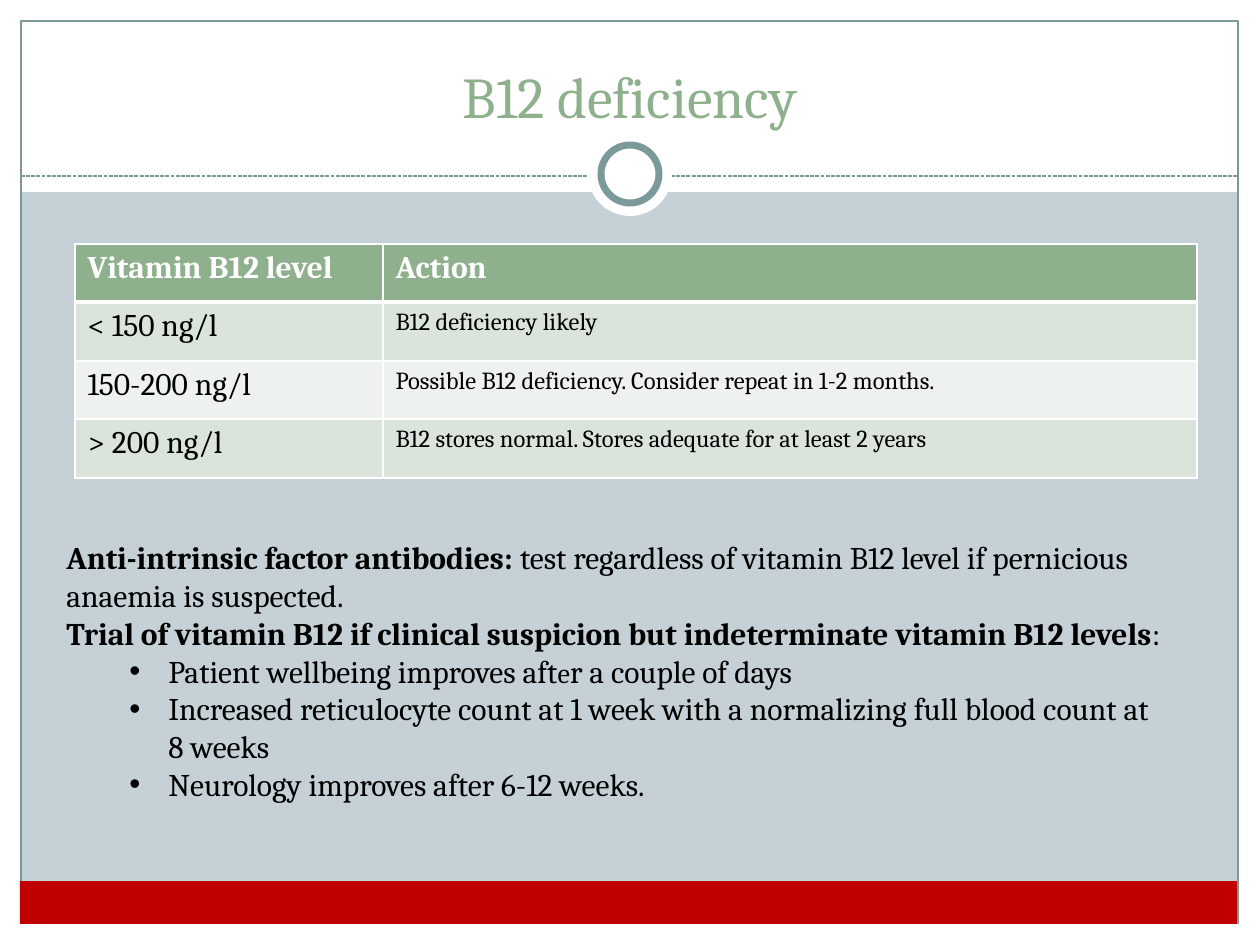
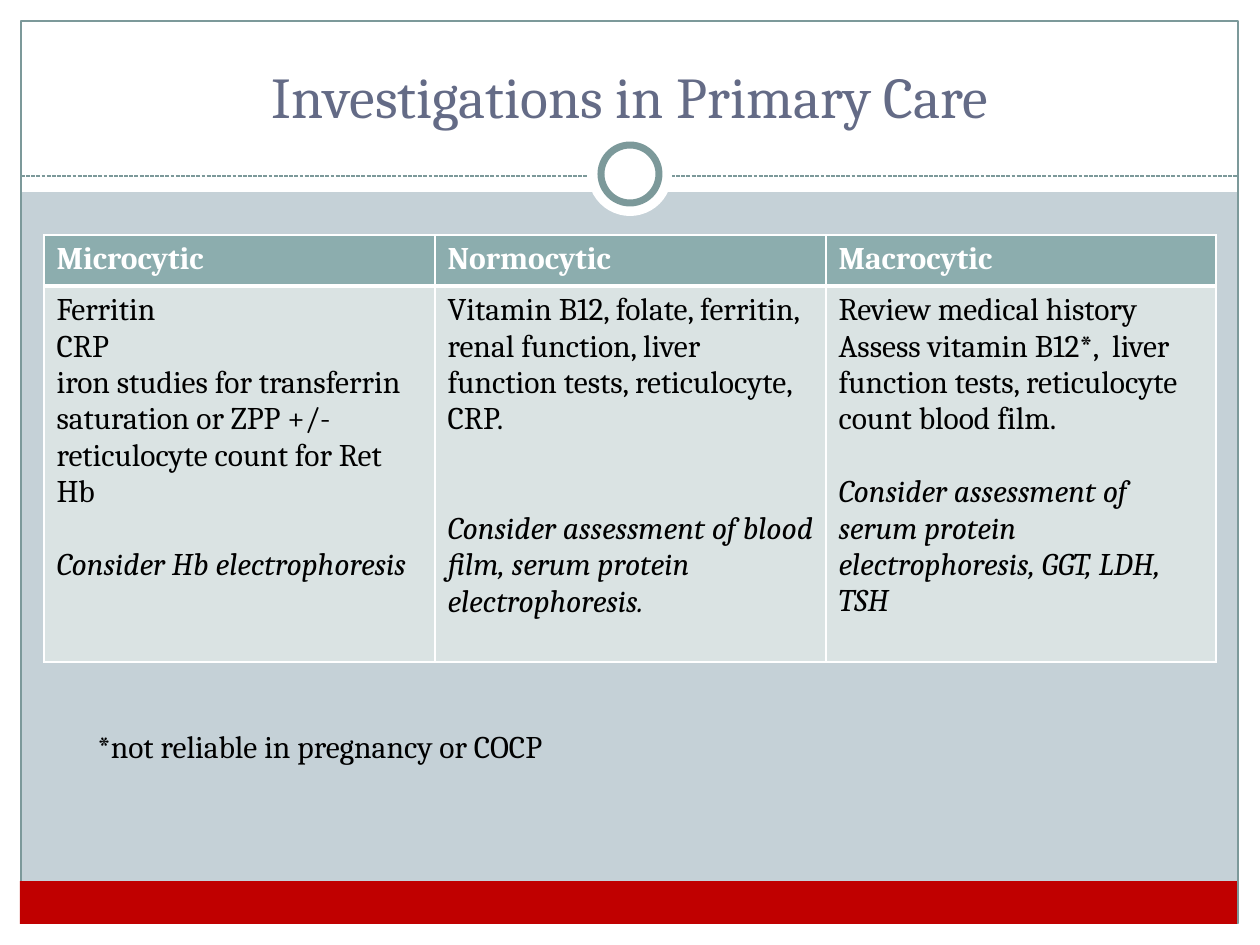
from lxml.etree import SubElement
from pptx import Presentation
from pptx.dml.color import RGBColor
from pptx.enum.dml import MSO_LINE
from pptx.enum.shapes import MSO_CONNECTOR as Connector, MSO_SHAPE as Shape
from pptx.enum.text import MSO_ANCHOR as Anchor, MSO_AUTO_SIZE as AutoSize, PP_ALIGN as Align
from pptx.oxml.ns import qn
from pptx.util import Pt

EMU_PER_PX = 914400 / 126
WIDTH, HEIGHT = 1260, 945
EDGE = 21
TITLE_ONLY = 5

WHITE = RGBColor(0xFF, 0xFF, 0xFF)
BLACK = RGBColor(0x00, 0x00, 0x00)
BACKGROUND = RGBColor(0xC5, 0xD1, 0xD7)
FRAME = RGBColor(0x7C, 0x99, 0x9A)
RED = RGBColor(0xC0, 0x00, 0x00)
GREEN = RGBColor(0x8F, 0xB0, 0x8C)
GREEN_BAND = RGBColor(0xDB, 0xE4, 0xDA)
GREEN_PALE = RGBColor(0xEE, 0xF2, 0xEE)
SLATE = RGBColor(0x64, 0x6B, 0x86)
TEAL = RGBColor(0x8C, 0xAD, 0xAE)
TEAL_BAND = RGBColor(0xDA, 0xE3, 0xE3)

BODY = {"name": "Cambria", "size": Pt(18), "bold": False}
BOLD = {"bold": True}
ITALIC = {"italic": True}
SMALL = {"size": Pt(14)}
BOX_LINE = {"line_spacing": Pt(21.6)}


def px(length):
    return round(length * EMU_PER_PX)


def set_values(target, values):
    for name, value in values.items():
        setattr(target, name, value)


class Deck:
    def __init__(self):
        self.presentation = Presentation()
        set_values(self.presentation, {"slide_width": px(WIDTH), "slide_height": px(HEIGHT)})
        self.slide = None

    def add_slide(self, title, color):
        layout = self.presentation.slide_layouts[TITLE_ONLY]
        self.slide = self.presentation.slides.add_slide(layout)
        fill = self.slide.background.fill
        fill.solid()
        fill.fore_color.rgb = BACKGROUND
        self.frame()
        self.title(title, color)

    def frame(self):
        for box in (
            (0, HEIGHT - EDGE, WIDTH, EDGE),
            (0, 0, WIDTH, 192),
            (0, 0, EDGE, HEIGHT),
            (WIDTH - EDGE, 0, EDGE, HEIGHT),
        ):
            self.shape(Shape.RECTANGLE, box, WHITE)
        self.shape(Shape.RECTANGLE, (EDGE, EDGE, 1217, 902), line=(FRAME, 0.75))
        self.dashed_line(EDGE, WIDTH - EDGE, 176)
        self.shape(Shape.OVAL, (588, 132, 84, 84), WHITE)
        self.shape(Shape.OVAL, (601, 145, 58, 58), WHITE, (FRAME, 4))
        self.shape(Shape.RECTANGLE, (20, 881, 1217, 43), RED)

    def shape(self, kind, box, fill=None, line=None):
        shape = self.slide.shapes.add_shape(kind, *map(px, box))
        shape.shadow.inherit = False
        if fill is None:
            shape.fill.background()
        else:
            shape.fill.solid()
            shape.fill.fore_color.rgb = fill
        if line is None:
            shape.line.fill.background()
        else:
            color, width = line
            shape.line.color.rgb = color
            shape.line.width = Pt(width)

    def dashed_line(self, left, right, y):
        connector = self.slide.shapes.add_connector(
            Connector.STRAIGHT, px(left), px(y), px(right), px(y))
        connector.line.color.rgb = FRAME
        set_values(connector.line, {"width": Pt(0.75), "dash_style": MSO_LINE.SQUARE_DOT})
        SubElement(connector._element.spPr, qn("a:effectLst"))

    def title(self, text, color):
        title = self.slide.shapes.title
        self.slide.shapes._spTree.append(title._element)
        set_values(title, {"left": px(42), "top": px(31), "width": px(1176), "height": px(105)})
        set_values(title.text_frame, {
            "word_wrap": True, "auto_size": AutoSize.NONE, "vertical_anchor": Anchor.BOTTOM})
        paragraph = title.text_frame.paragraphs[0]
        paragraph.alignment = Align.CENTER
        self.run(paragraph, text, {"size": Pt(33)}, color)

    def run(self, paragraph, text, style, color=BLACK):
        run = paragraph.add_run()
        run.text = text
        set_values(run.font, BODY | style)
        run.font.color.rgb = color

    def text(self, box, paragraphs):
        shape = self.slide.shapes.add_textbox(*map(px, box))
        frame = shape.text_frame
        frame.word_wrap = True
        for index, (runs, bulleted) in enumerate(paragraphs):
            paragraph = frame.paragraphs[0] if index == 0 else frame.add_paragraph()
            if bulleted:
                self.bullet(paragraph)
            set_values(paragraph, BOX_LINE)
            for text, style in runs:
                self.run(paragraph, text, style)

    def bullet(self, paragraph):
        paragraph.level = 1
        properties = paragraph._p.get_or_add_pPr()
        properties.set("marL", str(px(102)))
        properties.set("indent", str(px(-39)))
        SubElement(properties, qn("a:buFont"), typeface="Arial")
        SubElement(properties, qn("a:buChar"), char="•")

    def table(self, left, top, widths, heights, rows, fills):
        box = (left, top, sum(widths), sum(heights))
        frame = self.slide.shapes.add_table(len(rows), len(widths), *map(px, box))
        table = frame.table
        for column, width in zip(table.columns, widths):
            column.width = px(width)
        for index, (row, height, values) in enumerate(zip(table.rows, heights, rows)):
            row.height = px(height)
            for cell, paragraphs in zip(row.cells, values):
                self.borders(cell, index)
                cell.fill.solid()
                cell.fill.fore_color.rgb = fills[index]
                self.cell_text(cell, paragraphs, header=index == 0)

    def borders(self, cell, row_index):
        thick = {0: "lnB", 1: "lnT"}.get(row_index)
        properties = cell._tc.get_or_add_tcPr()
        for side in ("lnL", "lnR", "lnT", "lnB"):
            width = Pt(3 if side == thick else 1)
            border = SubElement(properties, qn(f"a:{side}"), w=str(width))
            fill = SubElement(border, qn("a:solidFill"))
            SubElement(fill, qn("a:srgbClr"), val=str(WHITE))

    def cell_text(self, cell, paragraphs, header):
        frame = cell.text_frame
        for index, (text, style, space) in enumerate(paragraphs):
            paragraph = frame.paragraphs[0] if index == 0 else frame.add_paragraph()
            if space:
                paragraph.space_before = Pt(space)
            self.run(paragraph, text, BOLD if header else style, WHITE if header else BLACK)


def line(text, style=None, space=0):
    return text, style or {}, space


def b12_deficiency(deck):
    deck.add_slide("B12 deficiency", GREEN)
    deck.text((54, 532, 1122, 318), [
        ([("Anti-intrinsic factor antibodies: ", BOLD),
          ("test regardless of vitamin B12 level if pernicious anaemia is suspected.", {})], False),
        ([("Trial of vitamin B12 if clinical suspicion but indeterminate vitamin B12 levels", BOLD),
          (":", {})], False),
        ([("Patient wellbeing improves aft", {}), ("e", {"size": Pt(16)}),
          ("r a couple of days", {})], True),
        ([("Increased reticulocyte count at 1 week with a normalizing full blood count at 8 weeks",
           {})], True),
        ([("Neurology improves after 6-12 weeks.", {})], True),
    ])
    levels = [
        ("< 150 ng/l", "B12 deficiency likely"),
        ("150-200 ng/l", "Possible B12 deficiency. Consider repeat in 1-2 months."),
        ("> 200 ng/l", "B12 stores normal. Stores adequate for at least 2 years"),
    ]
    rows = [[[line("Vitamin B12 level")], [line("Action")]]]
    rows += [[[line(level)], [line(action, SMALL)]] for level, action in levels]
    deck.table(75, 244, (308, 814), (58, 59, 58, 59), rows,
               (GREEN, GREEN_BAND, GREEN_PALE, GREEN_BAND))


def investigations(deck):
    deck.add_slide("Investigations in Primary Care", SLATE)
    headers = [[line(name)] for name in ("Microcytic", "Normocytic", "Macrocytic")]
    tests = [
        [line("Ferritin"),
         line("CRP"),
         line("iron studies for transferrin saturation or ZPP +/- reticulocyte count for Ret Hb"),
         line("Consider Hb electrophoresis", ITALIC, 21)],
        [line("Vitamin B12, folate, ferritin, renal function, liver function tests, "
              "reticulocyte, CRP."),
         line("Consider assessment of blood film, serum protein electrophoresis.", ITALIC, 42)],
        [line("Review medical history"),
         line("Assess vitamin B12*,  liver function tests, reticulocyte count blood film."),
         line("Consider assessment of serum protein electrophoresis, GGT, LDH, TSH", ITALIC, 21)],
    ]
    deck.table(44, 235, (391, 391, 390), (51, 376), [headers, tests], (TEAL, TEAL_BAND))
    deck.text((85, 721, 546, 50), [([("*not reliable in pregnancy or COCP", {})], False)])


def main():
    deck = Deck()
    b12_deficiency(deck)
    investigations(deck)
    deck.presentation.save("out.pptx")


if __name__ == "__main__":
    main()
